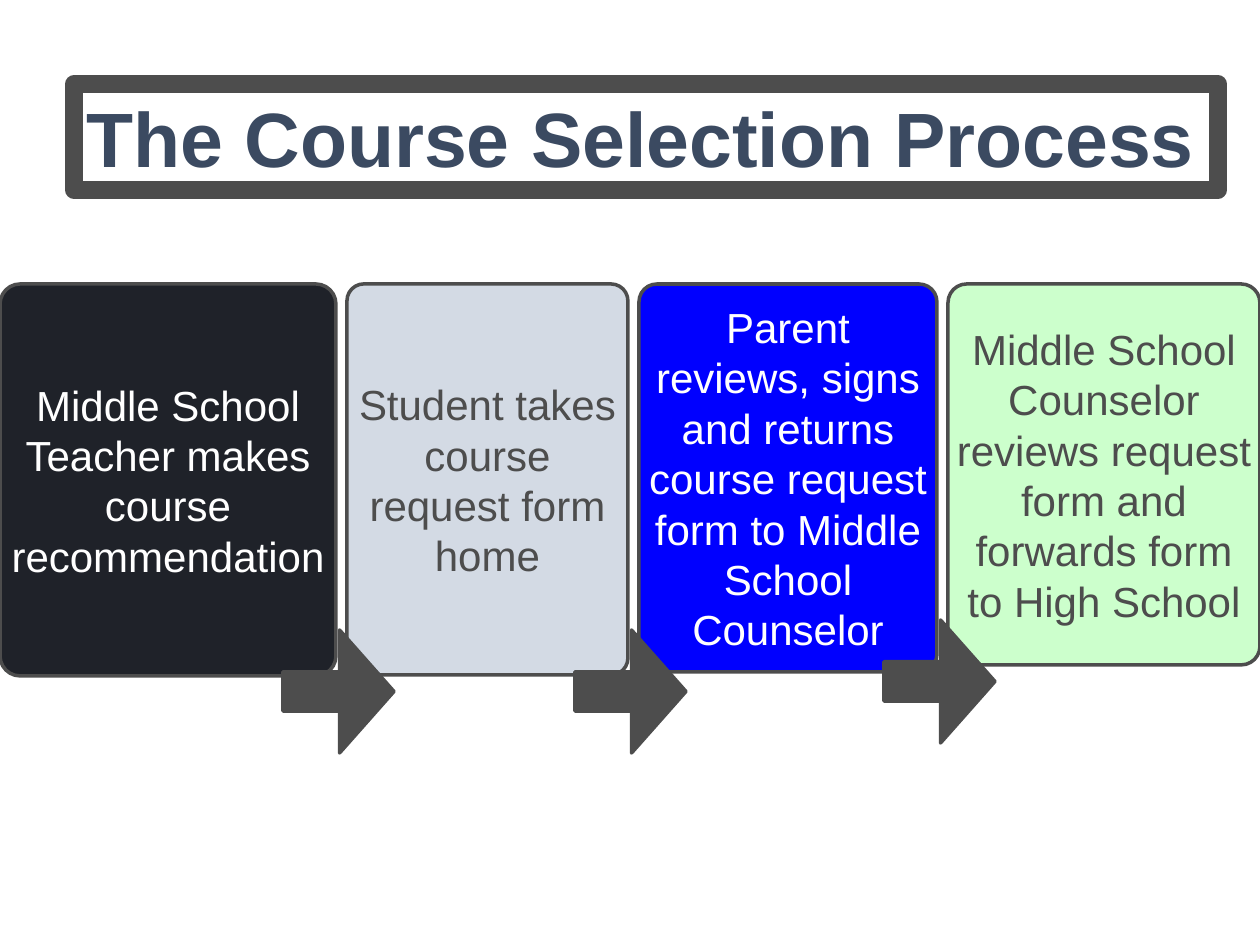
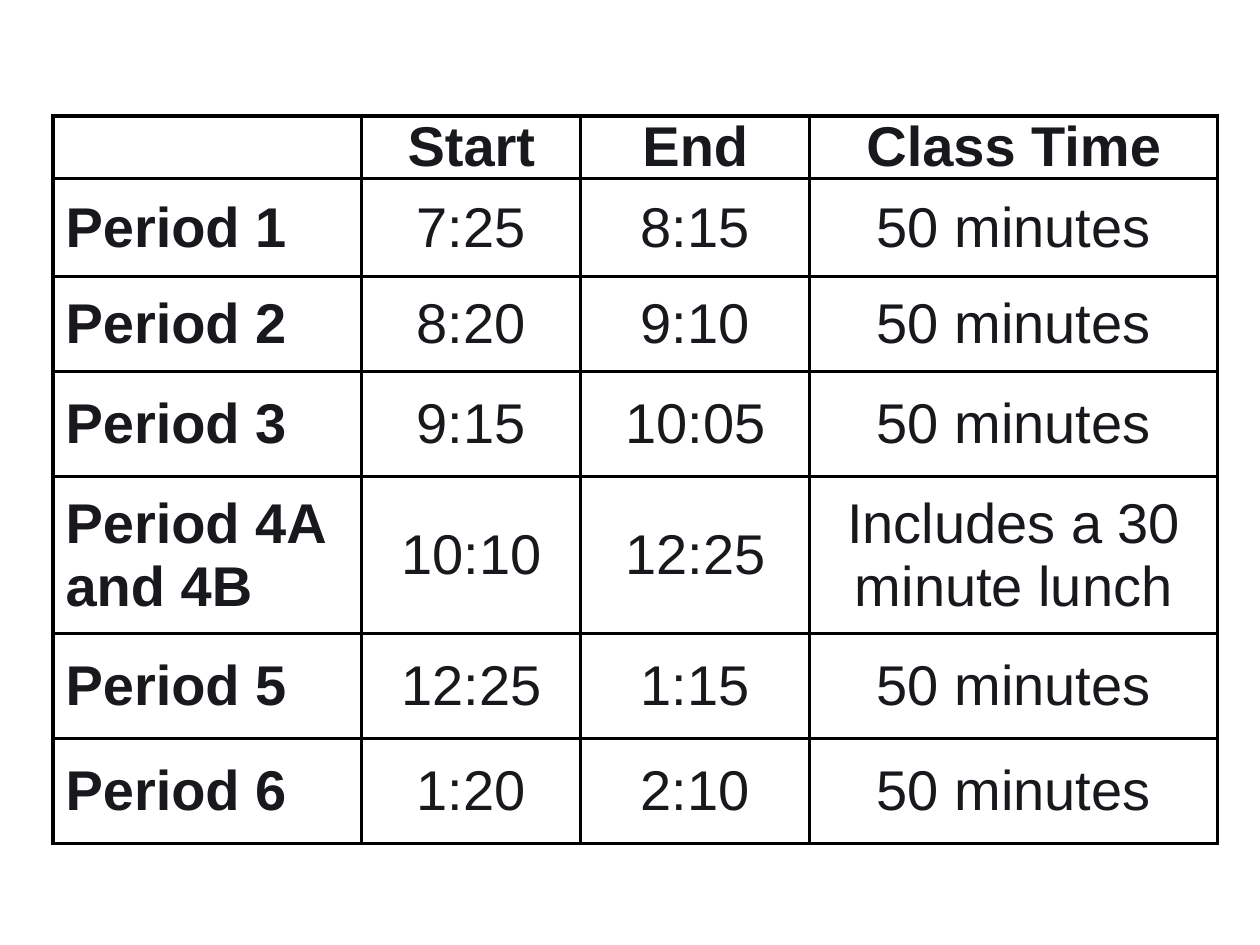
from lxml import etree
from pptx import Presentation
from pptx import util as u
from pptx.dml.color import RGBColor
from pptx.enum import shapes, text
from pptx.oxml import ns

PX = u.Inches(1) // 126
FONT = "Arial"
WHITE = RGBColor(0xFF, 0xFF, 0xFF)
GREY = RGBColor(0x4D, 0x4D, 0x4D)
NAVY = RGBColor(0x3B, 0x4A, 0x61)
INK = RGBColor(0x18, 0x19, 0x1C)
DARK = RGBColor(0x1F, 0x22, 0x29)
PALE_BLUE = RGBColor(0xD3, 0xDA, 0xE4)
BLUE = RGBColor(0x00, 0x00, 0xFF)
PALE_GREEN = RGBColor(0xCC, 0xFF, 0xCC)
BORDER = "000000"

# Content: process steps as (text, fill, font colour, width, height)
TITLE = "The Course Selection Process"
STEPS = [
    ("Middle School Teacher makes course recommendation", DARK, WHITE, 336, 392),
    ("Student takes course request form home", PALE_BLUE, GREY, 281, 391),
    ("Parent reviews, signs and returns course request form to "
     "Middle School Counselor", BLUE, WHITE, 298, 388),
    ("Middle School Counselor reviews request form and forwards form "
     "to High School", PALE_GREEN, GREY, 312, 381),
]
STEP_TOP, STEP_GAP = 284, 11
ARROW_TOPS = [630, 630, 620]
ARROW_SIZE, ARROW_OVERLAP = (111, 123), 64

# Content: bell schedule
SCHEDULE = [
    ("", "Start", "End", "Class Time"),
    ("Period 1", "7:25", "8:15", "50 minutes"),
    ("Period 2", "8:20", "9:10", "50 minutes"),
    ("Period 3", "9:15", "10:05", "50 minutes"),
    ("Period 4A and 4B", "10:10", "12:25", "Includes a 30 minute lunch"),
    ("Period 5", "12:25", "1:15", "50 minutes"),
    ("Period 6", "1:20", "2:10", "50 minutes"),
]
COLUMN_WIDTHS = [309, 219, 229, 408]
ROW_HEIGHTS = [63, 98, 95, 105, 157, 105, 105]

MARGINS = ("margin_left", "margin_top", "margin_right", "margin_bottom")
NO_MARGINS = dict.fromkeys(MARGINS, 0)


def apply(target, **values):
    for name, value in values.items():
        setattr(target, name, value)


def scaled(*lengths):
    return [length * PX for length in lengths]


def write(frame, words, size, colour, bold=False, align=text.PP_ALIGN.CENTER):
    para = frame.paragraphs[0]
    para.alignment = align
    if words:
        span = para.add_run()
        span.text = words
        apply(span.font, name=FONT, size=u.Pt(size), bold=bold)
        span.font.color.rgb = colour


def outline(shape, points):
    shape.line.color.rgb = GREY
    shape.line.width = u.Pt(points)


def add_block(page, kind, place, fill, adjustments):
    block = page.shapes.add_shape(kind, *scaled(*place))
    block.shadow.inherit = False
    block.fill.solid()
    block.fill.fore_color.rgb = fill
    outline(block, 2)
    for index, value in enumerate(adjustments):
        block.adjustments[index] = value
    return block


def add_borders(cell):
    properties = cell._tc.get_or_add_tcPr()
    for index, side in enumerate(("lnL", "lnR", "lnT", "lnB")):
        line = etree.Element(ns.qn(f"a:{side}"), w=str(u.Pt(2)))
        fill = etree.SubElement(line, ns.qn("a:solidFill"))
        etree.SubElement(fill, ns.qn("a:srgbClr"), val=BORDER)
        properties.insert(index, line)


def build_process(deck):
    page = deck.slides.add_slide(deck.slide_layouts[5])

    # Framed title
    title = page.shapes.title
    left, top, width, height = scaled(74, 84, 1144, 106)
    apply(title, left=left, top=top, width=width, height=height)
    outline(title, 10)
    apply(title.text_frame, word_wrap=False, auto_size=text.MSO_AUTO_SIZE.NONE,
          vertical_anchor=text.MSO_ANCHOR.TOP)
    write(title.text_frame, TITLE, 44, NAVY, True, text.PP_ALIGN.LEFT)

    # Step boxes
    step_left, step_lefts = 0, []
    for words, fill, colour, width, height in STEPS:
        box = add_block(page, shapes.MSO_SHAPE.ROUNDED_RECTANGLE,
                        (step_left, STEP_TOP, width, height), fill, [0.06])
        apply(box.text_frame, word_wrap=True,
              vertical_anchor=text.MSO_ANCHOR.MIDDLE, **NO_MARGINS)
        write(box.text_frame, words, 24, colour)
        step_lefts.append(step_left)
        step_left += width + STEP_GAP

    # Arrows reach from each step into the next
    for next_left, top in zip(step_lefts[1:], ARROW_TOPS):
        add_block(page, shapes.MSO_SHAPE.RIGHT_ARROW,
                  (next_left - ARROW_OVERLAP, top, *ARROW_SIZE), GREY, [0.32, 0.49])


def build_schedule(deck):
    page = deck.slides.add_slide(deck.slide_layouts[6])
    place = scaled(53, 116, sum(COLUMN_WIDTHS), sum(ROW_HEIGHTS))
    table = page.shapes.add_table(len(SCHEDULE), len(COLUMN_WIDTHS), *place).table
    apply(table, first_row=False, horz_banding=False)
    for column, width in zip(table.columns, COLUMN_WIDTHS):
        column.width = width * PX
    for row, height in zip(table.rows, ROW_HEIGHTS):
        row.height = height * PX

    for row_index, entries in enumerate(SCHEDULE):
        for column_index, words in enumerate(entries):
            cell = table.cell(row_index, column_index)
            is_label = column_index == 0
            apply(cell, vertical_anchor=text.MSO_ANCHOR.MIDDLE, **NO_MARGINS)
            if is_label:
                cell.margin_left = u.Inches(0.1)
            cell.fill.background()
            add_borders(cell)
            write(cell.text_frame, words, 32, INK, is_label or row_index == 0,
                  text.PP_ALIGN.LEFT if is_label else text.PP_ALIGN.CENTER)


def main():
    deck = Presentation()
    apply(deck, slide_width=u.Inches(10), slide_height=u.Inches(7.5))
    build_process(deck)
    build_schedule(deck)
    deck.save("out.pptx")


if __name__ == "__main__":
    main()
